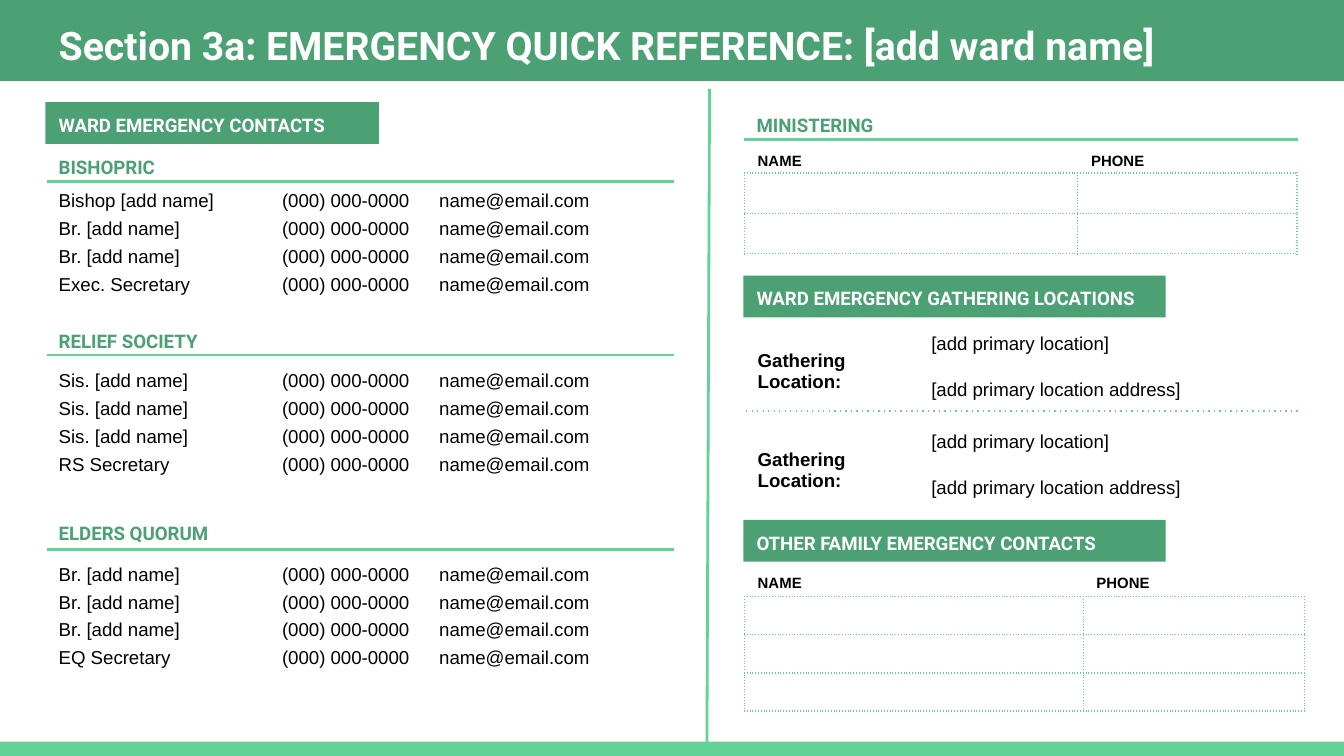
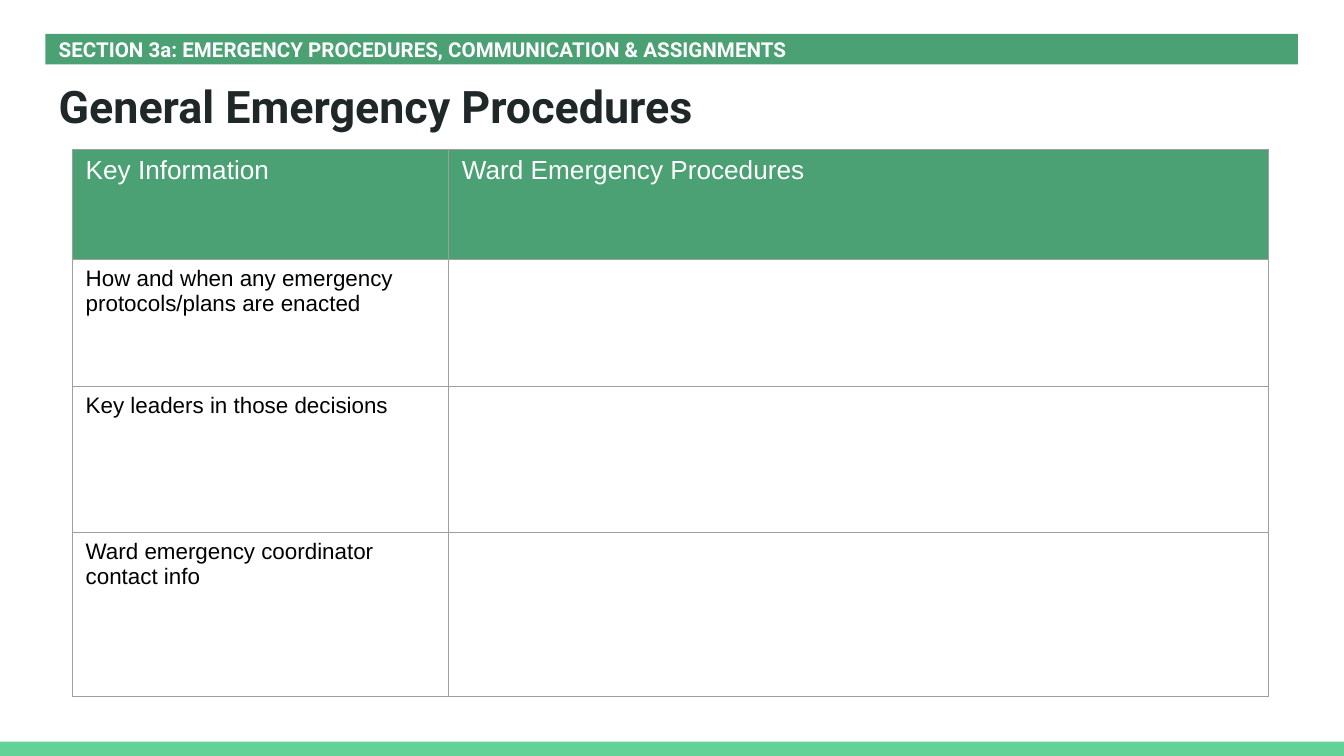
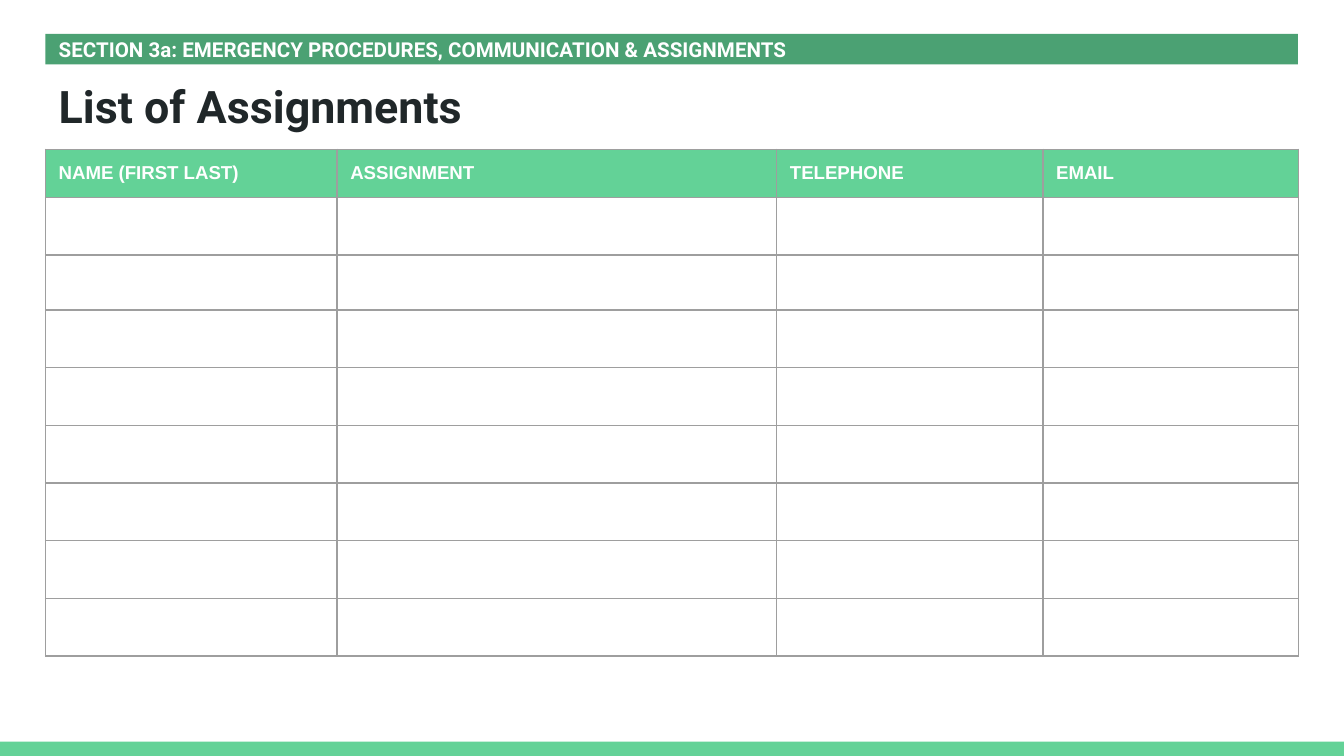
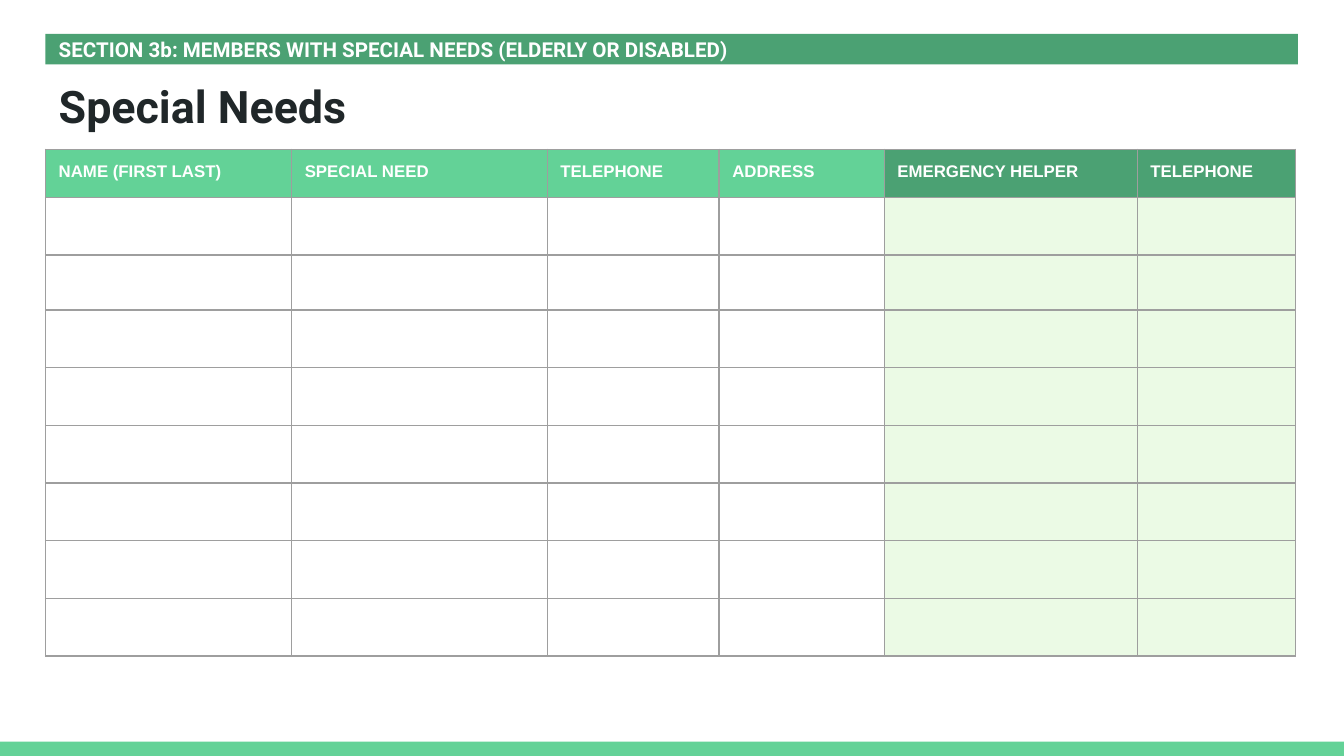
"""Build the four emergency planning slides of a ward handbook."""
from lxml.etree import SubElement
from pptx import Presentation
from pptx.dml.color import RGBColor
from pptx.enum.shapes import MSO_CONNECTOR, MSO_SHAPE
from pptx.enum.text import MSO_ANCHOR, MSO_AUTO_SIZE, PP_ALIGN
from pptx.oxml.ns import qn
from pptx.util import Cm, Pt

COLORS = {"green": "4BA173", "mint": "63D297", "pale": "EBFAE5", "white": "FFFFFF",
          "black": "000000", "ink": "202729", "gray": "9E9E9E"}

PHONE, EMAIL = "(000) 000-0000", "name@email.com"
CONTACT_GROUPS = [
    {"heading": "BISHOPRIC", "top": 2.74, "rule": 3.43, "table": 3.61,
     "names": ["Bishop [add name]", "Br. [add name]", "Br. [add name]", "Exec. Secretary"]},
    {"heading": "RELIEF SOCIETY", "top": 6.02, "rule": 6.71, "table": 7.01,
     "names": ["Sis. [add name]"] * 3 + ["RS Secretary"]},
    {"heading": "ELDERS QUORUM", "top": 9.65, "rule": 10.39, "table": 10.67,
     "names": ["Br. [add name]"] * 3 + ["EQ Secretary"]},
]
REFERENCE_BARS = [
    ("WARD EMERGENCY CONTACTS", 0.86, 1.93, 6.3),
    ("WARD EMERGENCY GATHERING LOCATIONS", 14.05, 5.21, 7.98),
    ("OTHER FAMILY EMERGENCY CONTACTS", 14.05, 9.83, 7.98),
]
GATHERING_TEXTS = [["Gathering Location:", "[add primary location]", ""],
                   ["", "[add primary location address]", ""]]
GATHERING_TOPS = [6.17, 8.03]
PHONE_LISTS = [
    {"top": 2.84, "columns": [6.3, 0.81, 3.33], "heights": [0.43] + [0.76] * 2},
    {"top": 10.77, "columns": [6.4, 0.81, 3.38], "heights": [0.51] + [0.72] * 3},
]
SECTION_3A = "SECTION 3a: EMERGENCY PROCEDURES, COMMUNICATION & ASSIGNMENTS"
SECTION_3B = "SECTION 3b: MEMBERS WITH SPECIAL NEEDS (ELDERLY OR DISABLED)"
PROCEDURES = [["Key Information", "Ward Emergency Procedures"],
              ["How and when any emergency protocols/plans are enacted", ""],
              ["Key leaders in those decisions", ""],
              ["Ward emergency coordinator contact info", ""]]
ASSIGNMENT_HEADERS = ["NAME (FIRST LAST)", "ASSIGNMENT", "TELEPHONE", "EMAIL"]
NEED_HEADERS = ["NAME (FIRST LAST)", "SPECIAL NEED", "TELEPHONE", "ADDRESS",
                "EMERGENCY HELPER", "TELEPHONE"]
FORM_HEIGHTS = [0.91, 1.09, 1.04] + [1.09] * 6

LEFT, CONTENT_WIDTH, RIGHT_COLUMN = 0.86, 23.67, 14.07
HEADING_SIZE = (5.92, 0.79)
NO_STYLE_TABLE = "{2D5ABB26-0587-4C30-8999-92F81FD0307C}"


def text_style(size, color, bold=False, name="Arial", anchor=MSO_ANCHOR.MIDDLE,
               margins=(0.25, 0.25, 0.25, 0.25), spacing=1.0):
    sides = ("margin_left", "margin_top", "margin_right", "margin_bottom")
    box = {side: Cm(margin) for side, margin in zip(sides, margins)}
    return {"box": {**box, "vertical_anchor": anchor},
            "paragraph": {"alignment": PP_ALIGN.LEFT, "line_spacing": spacing,
                          "space_before": Pt(0), "space_after": Pt(0)},
            "font": {"size": Pt(size), "bold": bold, "name": name}, "color": color}


CELL = (0.25, 0.13, 0.25, 0.13)
STYLES = {
    "banner": text_style(21, "white", True, "Roboto"),
    "title": text_style(24, "ink", True, "Roboto", MSO_ANCHOR.TOP),
    "section": text_style(11, "white", True, "Roboto", margins=(0.25, 0, 0, 0)),
    "bar": text_style(10, "white", True, "Roboto", spacing=1.15),
    "heading": text_style(10, "green", True, "Roboto", spacing=1.15),
    "contact": text_style(10, "black", margins=(0.25, 0, 0, 0.13)),
    "location": text_style(10, "black", margins=(0.25, 0.13, 0, 0.13)),
    "location label": text_style(10, "black", True, margins=(0.25, 0.13, 0, 0.13)),
    "phone list": text_style(8, "black", True, margins=(0.25, 0, 0, 0)),
    "procedure header": text_style(14, "white", anchor=MSO_ANCHOR.TOP, margins=CELL),
    "procedure": text_style(12, "black", anchor=MSO_ANCHOR.TOP, margins=CELL),
    "assignment header": text_style(10, "white", True, anchor=MSO_ANCHOR.TOP),
    "need header": text_style(9, "white", True, anchor=MSO_ANCHOR.TOP),
}


def rgb(color):
    return RGBColor.from_string(COLORS[color])


def apply_values(target, values):
    for name, value in values.items():
        setattr(target, name, value)


def write_text(holder, text_frame, text, style):
    apply_values(holder, style["box"])
    paragraph = text_frame.paragraphs[0]
    apply_values(paragraph, style["paragraph"])
    if text:
        run = paragraph.add_run()
        run.text = text
        apply_values(run.font, style["font"])
        run.font.color.rgb = rgb(style["color"])
    else:
        size = str(int(style["font"]["size"].pt * 100))
        SubElement(text_frame.paragraphs[0]._p, qn("a:endParaRPr"), sz=size)


def fill_placeholder(placeholder, text, style_name, left, top, width, height):
    apply_values(placeholder, {"left": Cm(left), "top": Cm(top),
                               "width": Cm(width), "height": Cm(height)})
    text_frame = placeholder.text_frame
    apply_values(text_frame, {"word_wrap": True, "auto_size": MSO_AUTO_SIZE.NONE})
    write_text(text_frame, text_frame, text, STYLES[style_name])
    for properties in placeholder.element.iter(qn("a:pPr")):
        properties.set("marL", "0")
        properties.set("indent", "0")
        SubElement(properties, qn("a:buNone"))


def add_bar(slide, left, top, width, height, color, text="", style_name="bar"):
    bar = slide.shapes.add_shape(MSO_SHAPE.RECTANGLE, Cm(left), Cm(top), Cm(width), Cm(height))
    bar.shadow.inherit = False
    bar.fill.solid()
    bar.fill.fore_color.rgb = rgb(color)
    bar.line.fill.background()
    if text:
        bar.text_frame.word_wrap = True
        write_text(bar.text_frame, bar.text_frame, text, STYLES[style_name])
    return bar


def add_rule(slide, start, end, width=1.5, dash=None):
    points = [Cm(value) for value in (*start, *end)]
    rule = slide.shapes.add_connector(MSO_CONNECTOR.STRAIGHT, *points)
    rule.line.width = Pt(width)
    rule.line.color.rgb = rgb("mint")
    properties = rule.element.spPr
    if dash:
        SubElement(properties.find(qn("a:ln")), qn("a:prstDash"), val=dash)
    SubElement(properties, qn("a:effectLst"))


def add_borders(cell_properties, sides, color, dash):
    for side in sides:
        line = SubElement(cell_properties, qn(f"a:ln{side}"), w=str(Pt(0.75)))
        SubElement(SubElement(line, qn("a:solidFill")), qn("a:srgbClr"), val=COLORS[color])
        SubElement(line, qn("a:prstDash"), val=dash)


def add_grid(slide, left, top, columns, heights, texts, body, header=None, label=None,
             header_fills=None, body_fills=None, border=None, header_sides="LRTB", merges=()):
    frame = slide.shapes.add_table(len(heights), len(columns), Cm(left), Cm(top),
                                   Cm(sum(columns)), Cm(sum(heights)))
    table = frame.table
    apply_values(table, {"first_row": False, "horz_banding": False})
    next(frame.element.iter(qn("a:tableStyleId"))).text = NO_STYLE_TABLE
    for column, width in zip(table.columns, columns):
        column.width = Cm(width)
    for row, height in zip(table.rows, heights):
        row.height = Cm(height)
    elements = list(frame.element.iter(qn("a:tc")))
    for index, (cell, element) in enumerate(zip(table.iter_cells(), elements)):
        row, column = divmod(index, len(columns))
        is_header = bool(header) and row == 0
        style_name = header if is_header else label if label and column == 0 else body
        text = texts[row][column] if row < len(texts) else ""
        write_text(cell, cell.text_frame, text, STYLES[style_name])
        if border:
            sides = header_sides if is_header else "LRTB"
            add_borders(element.get_or_add_tcPr(), sides, *border)
        fills = header_fills if is_header else body_fills
        if fills and fills[column]:
            cell.fill.solid()
            cell.fill.fore_color.rgb = rgb(fills[column])
        else:
            cell.fill.background()
    for first_row, first_column, last_row, last_column in merges:
        table.cell(first_row, first_column).merge(table.cell(last_row, last_column))


def add_footer_band(presentation, slide):
    band = add_bar(slide, 0, 14.02, 25.4, 0.27, "mint")
    band.element.xpath(".//p:cNvPr")[0].set("id", "20")
    presentation.slide_master.shapes.element.insert(2, band.element)


def build_quick_reference(presentation):
    slide = presentation.slides.add_slide(presentation.slide_layouts[4])
    add_footer_band(presentation, slide)
    banner = add_bar(slide, 0, 0, 25.4, 1.52, "green")
    banner.line.color.rgb = rgb("green")
    banner.line.width = Pt(0.75)
    slide.shapes.element.insert(2, banner.element)
    fill_placeholder(slide.shapes.title, "Section 3a: EMERGENCY QUICK REFERENCE: [add ward name]",
                     "banner", LEFT, 0, 23.6, 1.7)

    headings = [(group["heading"], LEFT, group["top"]) for group in CONTACT_GROUPS]
    headings.append(("MINISTERING", 14.05, 1.93))
    bodies = [shape for shape in slide.placeholders if shape.placeholder_format.idx > 0]
    for placeholder, (text, left, top) in zip(bodies, headings):
        fill_placeholder(placeholder, text, "heading", left, top, *HEADING_SIZE)
    for text, left, top, width in REFERENCE_BARS:
        add_bar(slide, left, top, width, HEADING_SIZE[1], "green", text)

    for group in CONTACT_GROUPS:
        add_rule(slide, (0.89, group["rule"]), (12.73, group["rule"]))
        add_grid(slide, LEFT, group["table"], [4.22, 2.97, 4.65], [0.52] * 4,
                 [[name, PHONE, EMAIL] for name in group["names"]], "contact")
    add_rule(slide, (13.41, 1.68), (13.36, 14.05))
    add_rule(slide, (RIGHT_COLUMN, 2.64), (24.54, 2.64))
    add_rule(slide, (14.1, 7.77), (24.54, 7.77), 0.75, "dot")

    for top in GATHERING_TOPS:
        add_grid(slide, RIGHT_COLUMN, top, [3.28, 3.94, 3.38], [0.67, 1.0], GATHERING_TEXTS,
                 "location", label="location label",
                 merges=[(0, 0, 1, 0), (0, 1, 0, 2), (1, 1, 1, 2)])
    for phone_list in PHONE_LISTS:
        heights = phone_list["heights"]
        add_grid(slide, RIGHT_COLUMN, phone_list["top"], phone_list["columns"], heights,
                 [["NAME", "PHONE", ""]], "phone list", header="phone list",
                 border=("mint", "dot"), header_sides="B",
                 merges=[(row, 1, row, 2) for row in range(len(heights))])


def build_section_slide(presentation, section, title, left, columns, heights, texts, **grid):
    slide = presentation.slides.add_slide(presentation.slide_layouts[5])
    fill_placeholder(slide.shapes.title, title, "title", LEFT, 1.24, CONTENT_WIDTH, 1.6)
    add_bar(slide, LEFT, 0.64, CONTENT_WIDTH, 0.58, "green", section, "section")
    add_grid(slide, left, 2.82, columns, heights, texts, "procedure",
             border=("gray", "solid"), **grid)


def main():
    presentation = Presentation()
    presentation.slide_width, presentation.slide_height = Cm(25.4), Cm(14.29)
    build_quick_reference(presentation)
    build_section_slide(presentation, SECTION_3A, "General Emergency Procedures", 1.37,
                        [7.11, 15.5], [2.08, 2.41, 2.75, 3.1], PROCEDURES,
                        header="procedure header", header_fills=["green"] * 2)
    build_section_slide(presentation, SECTION_3A, "List of Assignments", LEFT,
                        [5.51, 8.31, 5.03, 4.83], FORM_HEIGHTS, [ASSIGNMENT_HEADERS],
                        header="assignment header", header_fills=["mint"] * 4)
    build_section_slide(presentation, SECTION_3B, "Special Needs", LEFT,
                        [4.65, 4.83, 3.25, 3.12, 4.78, 3.0], FORM_HEIGHTS, [NEED_HEADERS],
                        header="need header", header_fills=["mint"] * 4 + ["green"] * 2,
                        body_fills=[None] * 4 + ["pale"] * 2)
    presentation.save("out.pptx")


if __name__ == "__main__":
    main()
